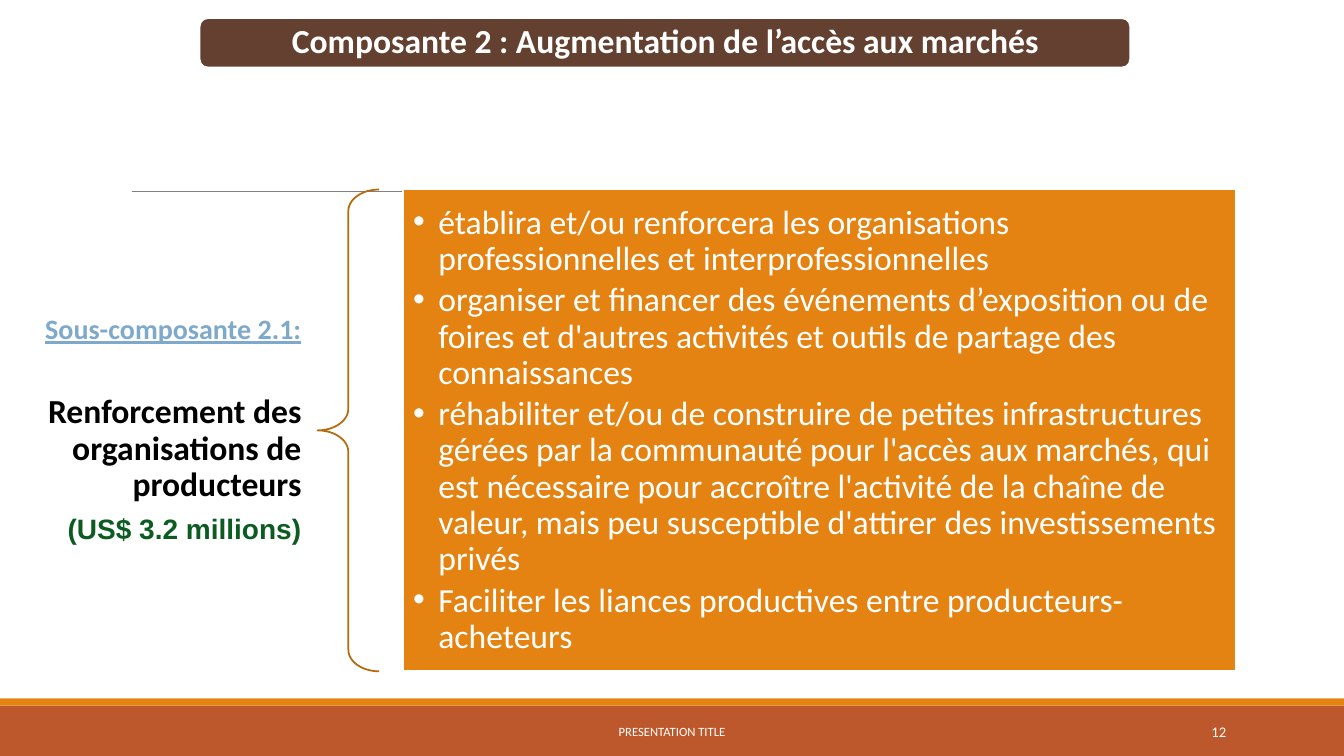
from pptx import Presentation
from pptx.dml.color import RGBColor
from pptx.enum.shapes import MSO_CONNECTOR, MSO_SHAPE
from pptx.enum.text import MSO_ANCHOR, PP_ALIGN
from pptx.oxml.ns import qn
from pptx.util import Inches, Pt
from lxml import etree

WIDTH, HEIGHT = 13.33, 7.5
ORANGE, RUST, BROWN, WHITE = "E48312", "BD582C", "63402F", "FFFFFF"

TITLE = "Composante 2 : Augmentation de l’accès aux marchés"
SUBCOMPONENT = [
    ("Sous-composante 2.1:", dict(size=20, color="7EA9CA", underline=True, after=35)),
    ("Renforcement des organisations de producteurs", dict(size=24, color="000000", after=8)),
    ("(US$ 3.2 millions)", dict(size=20, color="0C5C22", font="Arial", after=8)),
]
ACTIVITIES = [
    "établira et/ou renforcera les organisations professionnelles et interprofessionnelles",
    "organiser et financer des événements d’exposition ou de foires et d'autres activités "
    "et outils de partage des connaissances",
    "réhabiliter et/ou de construire de petites infrastructures gérées par la communauté "
    "pour l'accès aux marchés, qui est nécessaire pour accroître l'activité de la chaîne de "
    "valeur, mais peu susceptible d'attirer des investissements privés",
    "Faciliter les liances productives entre producteurs-acheteurs",
]
FOOTER = "PRESENTATION TITLE"
PAGE = "12"

BODY_TOP, BODY_HEIGHT = 1.88, 4.78
BODY_LEFT, BODY_WIDTH = 4, 8.26
BODY_RIGHT = BODY_LEFT + BODY_WIDTH
BRACE_LEFT, BRACE_WIDTH = 3.15, 0.61
LABEL_WIDTH, LABEL_HEIGHT = 3.56, 2.51
BAR_TOP, STRIPE = 7, 0.07
FOOTER_TOP, FOOTER_HEIGHT = 7.06, 0.4


def rgb(value):
    return RGBColor.from_string(value)


def add_block(kind, left, top, width, height, fill=None, line=None):
    block = slide.shapes.add_shape(
        kind, Inches(left), Inches(top), Inches(width), Inches(height))
    block.shadow.inherit = False
    if fill:
        block.fill.solid()
        block.fill.fore_color.rgb = rgb(fill)
    else:
        block.fill.background()
    if line:
        block.line.color.rgb = rgb(line)
        block.line.width = Pt(1.25)
    else:
        block.line.fill.background()
    return block


def add_frame(left, top, width, height, side=0.1, edge=0.1):
    frame = slide.shapes.add_textbox(
        Inches(left), Inches(top), Inches(width), Inches(height)).text_frame
    frame.word_wrap = True
    frame.vertical_anchor = MSO_ANCHOR.MIDDLE
    frame.margin_left = frame.margin_right = Inches(side)
    frame.margin_top = frame.margin_bottom = Inches(edge)
    return frame


def write(frame, text, size=24, color=WHITE, font="Calibri", bold=False, underline=False,
          align=PP_ALIGN.LEFT, spacing=0.9, after=0, bullet=False):
    paragraph = frame.paragraphs[0] if not frame.text else frame.add_paragraph()
    paragraph.alignment = align
    paragraph.line_spacing = spacing
    paragraph.space_after = Pt(after)
    if bullet:
        properties = paragraph._p.get_or_add_pPr()
        properties.set("marL", str(Inches(0.25)))
        properties.set("indent", str(-Inches(0.25)))
        etree.SubElement(properties, qn("a:buFont")).set("typeface", "Arial")
        etree.SubElement(properties, qn("a:buChar")).set("char", "•")
    run = paragraph.add_run()
    run.text = text
    run.font.size = Pt(size)
    run.font.name = font
    run.font.bold = bold
    run.font.underline = underline
    run.font.color.rgb = rgb(color)


deck = Presentation()
deck.slide_width, deck.slide_height = Inches(WIDTH), Inches(HEIGHT)
slide = deck.slides.add_slide(deck.slide_layouts[6])

add_block(MSO_SHAPE.RECTANGLE, 0, BAR_TOP, WIDTH, HEIGHT - BAR_TOP, RUST)
add_block(MSO_SHAPE.RECTANGLE, 0, BAR_TOP - STRIPE, WIDTH, STRIPE, ORANGE)

rule = slide.shapes.add_connector(
    MSO_CONNECTOR.STRAIGHT, Inches(1.31), Inches(1.9), Inches(12.21), Inches(1.9))
rule.line.color.rgb = rgb("808080")
rule.line.width = Pt(0.5)
etree.SubElement(rule._element.spPr, qn("a:effectLst"))

write(add_frame(4.03, FOOTER_TOP, 5.27, FOOTER_HEIGHT, edge=0.05), FOOTER,
      size=9, align=PP_ALIGN.CENTER, spacing=1)
write(add_frame(BODY_RIGHT - 1.43, FOOTER_TOP, 1.43, FOOTER_HEIGHT, edge=0.05), PAGE,
      size=10.5, align=PP_ALIGN.RIGHT, spacing=1)

add_block(MSO_SHAPE.ROUNDED_RECTANGLE, 1.98, 0.18, 9.23, 0.49, BROWN, WHITE)
write(add_frame(2.01, 0.2, 9.18, 0.44), TITLE, bold=True, align=PP_ALIGN.CENTER)

label = add_frame(BRACE_LEFT - LABEL_WIDTH, BODY_TOP + (BODY_HEIGHT - LABEL_HEIGHT) / 2,
                  LABEL_WIDTH, LABEL_HEIGHT, side=0.16, edge=0.06)
for text, look in SUBCOMPONENT:
    write(label, text, bold=True, align=PP_ALIGN.RIGHT, **look)

brace = add_block(MSO_SHAPE.LEFT_BRACE, BRACE_LEFT, BODY_TOP, BRACE_WIDTH, BODY_HEIGHT,
                  line="B7690E")
brace.adjustments[0] = 0.35

body = (BODY_LEFT, BODY_TOP, BODY_WIDTH, BODY_HEIGHT)
add_block(MSO_SHAPE.RECTANGLE, *body, ORANGE, WHITE)
activities = add_frame(*body)
for activity in ACTIVITIES:
    write(activities, activity, after=3.6, bullet=True)

deck.save("out.pptx")
